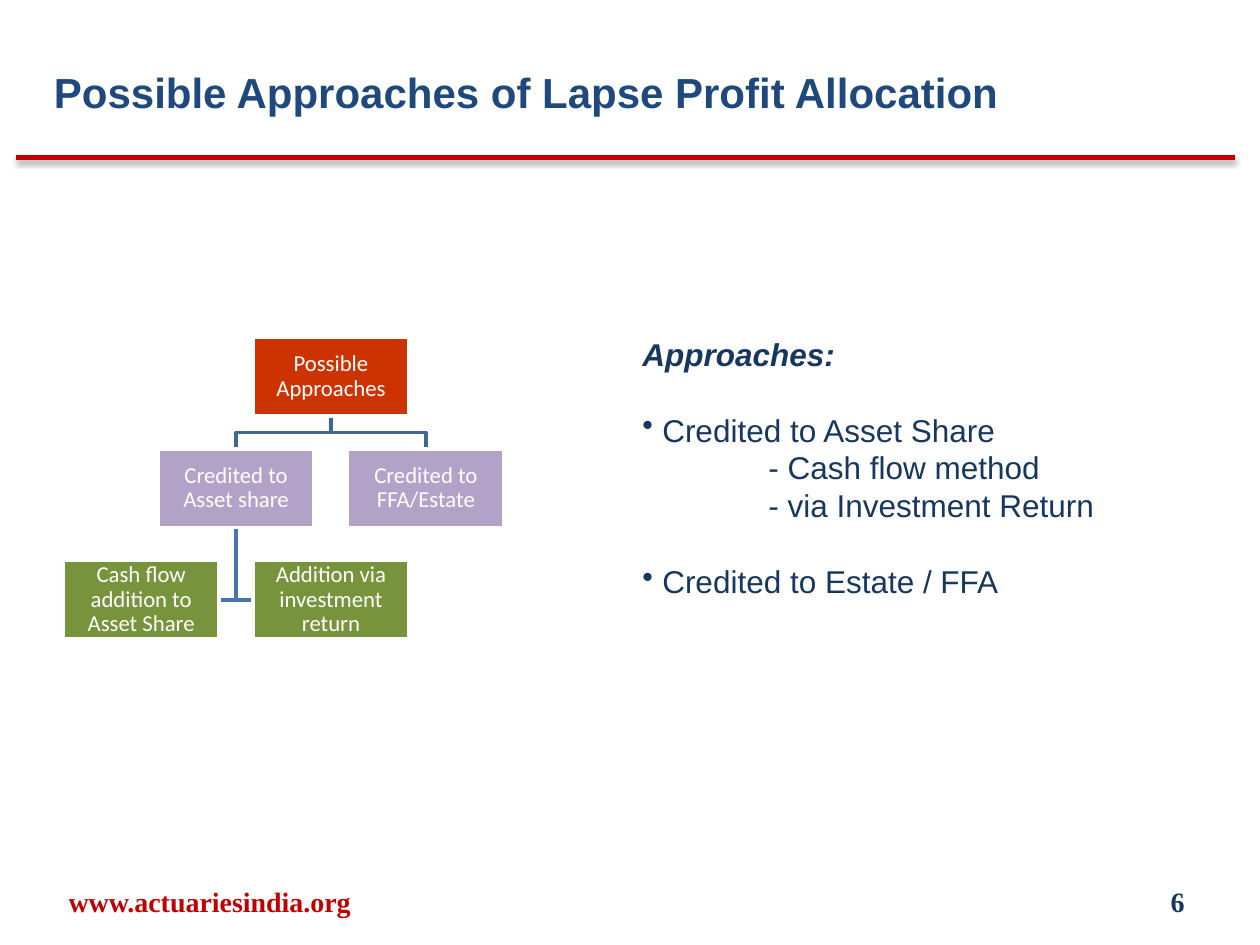
from lxml import etree
from pptx import Presentation
from pptx.dml.color import RGBColor
from pptx.enum.shapes import MSO_CONNECTOR, MSO_SHAPE
from pptx.enum.text import MSO_ANCHOR, PP_ALIGN
from pptx.oxml import parse_xml
from pptx.oxml.ns import qn
from pptx.util import Inches, Pt

STRAIGHT = MSO_CONNECTOR.STRAIGHT
RECTANGLE = MSO_SHAPE.RECTANGLE
MIDDLE = MSO_ANCHOR.MIDDLE
LEFT, CENTER, RIGHT = PP_ALIGN.LEFT, PP_ALIGN.CENTER, PP_ALIGN.RIGHT

WHITE = RGBColor(0xFF, 0xFF, 0xFF)
RED = RGBColor(0xC0, 0x00, 0x00)
BLUE = RGBColor(0x1F, 0x49, 0x7D)
NAVY = RGBColor(0x17, 0x37, 0x5E)
ORANGE = RGBColor(0xCC, 0x33, 0x00)
LILAC = RGBColor(0xB3, 0xA2, 0xC7)
GREEN = RGBColor(0x77, 0x93, 0x3C)
UPPER_LINK = RGBColor(0x3F, 0x67, 0x97)
LOWER_LINK = RGBColor(0x48, 0x75, 0xAC)

RULE_SHADOW = (
    '<a:effectLst xmlns:a="http://schemas.openxmlformats.org/drawingml/2006/main">'
    '<a:outerShdw blurRad="39370" dist="20320" dir="5400000" rotWithShape="0">'
    '<a:srgbClr val="000000"><a:alpha val="38000"/></a:srgbClr>'
    '</a:outerShdw></a:effectLst>'
)


def add_run(paragraph, text, size, font, color, bold=False, italic=False):
    run = paragraph.add_run()
    run.text = text
    run.font.size = Pt(size)
    run.font.name = font
    run.font.color.rgb = color
    run.font.bold = bold
    run.font.italic = italic


def add_text_frame(slide, left, top, width, height):
    frame = slide.shapes.add_textbox(left, top, width, height).text_frame
    frame.word_wrap = True
    return frame


def add_header(slide, left, top, width, height):
    rule_y = Inches(1.25)
    rule = slide.shapes.add_connector(STRAIGHT, Inches(0.13), rule_y, Inches(9.8), rule_y)
    rule.line.color.rgb = RED
    rule.line.width = Pt(3)
    rule._element.spPr.append(parse_xml(RULE_SHADOW))

    title = add_text_frame(slide, left, top, width, height)
    title.margin_top = Inches(0.2)
    add_run(title.paragraphs[0], "Possible Approaches of Lapse Profit Allocation",
            24, "Arial", BLUE, bold=True)


def add_footer_item(slide, left, top, width, height, text, color, align):
    frame = add_text_frame(slide, left, top, width, height)
    frame.vertical_anchor = MIDDLE
    frame.paragraphs[0].alignment = align
    add_run(frame.paragraphs[0], text, 16, "Times New Roman", color, bold=True)


def add_link(slide, points, color):
    builder = slide.shapes.build_freeform(*points[0])
    builder.add_line_segments(points[1:], close=False)
    link = builder.convert_to_shape()
    link.fill.background()
    link.line.color.rgb = color
    link.line.width = Pt(2)
    link.shadow.inherit = False


def add_node(slide, left, top, width, height, text, color):
    node = slide.shapes.add_shape(RECTANGLE, left, top, width, height)
    node.fill.solid()
    node.fill.fore_color.rgb = color
    node.line.color.rgb = WHITE
    node.line.width = Pt(2)
    node.shadow.inherit = False
    frame = node.text_frame
    frame.word_wrap = True
    frame.vertical_anchor = MIDDLE
    frame.margin_left = frame.margin_right = Inches(0.01)
    frame.margin_top = frame.margin_bottom = Inches(0.01)
    paragraph = frame.paragraphs[0]
    paragraph.alignment = CENTER
    paragraph.line_spacing = 0.9
    add_run(paragraph, text, 13, "Calibri", WHITE)


def add_hierarchy(slide, left, top, width, height):
    node_width, node_height = Inches(1.24), Inches(0.62)
    column_step = (width - node_width) // 3
    row_step = (height - node_height) // 2

    def column_x(column):
        return left + column * column_step

    def row_y(row):
        return top + row * row_step

    def center_x(column):
        return column_x(column) + node_width // 2

    root_bottom = row_y(0) + node_height
    branch_y = (root_bottom + row_y(1)) // 2
    for column in (3, 1):
        add_link(slide, [(center_x(2), root_bottom), (center_x(2), branch_y),
                         (center_x(column), branch_y), (center_x(column), row_y(1))],
                 UPPER_LINK)

    leaf_y = row_y(2) + node_height // 2
    for leaf_edge in (column_x(2), column_x(0) + node_width):
        add_link(slide, [(center_x(1), row_y(1) + node_height),
                         (center_x(1), leaf_y), (leaf_edge, leaf_y)], LOWER_LINK)

    nodes = [
        (2, 0, "Possible Approaches", ORANGE),
        (1, 1, "Credited to Asset share", LILAC),
        (0, 2, "Cash flow addition to Asset Share", GREEN),
        (2, 2, "Addition via investment return", GREEN),
        (3, 1, "Credited to FFA/Estate", LILAC),
    ]
    for column, row, text, color in nodes:
        add_node(slide, column_x(column), row_y(row), node_width, node_height, text, color)


def add_approaches(slide, left, top, width, height):
    frame = add_text_frame(slide, left, top, width, height)
    line_height = Pt(21.6)
    heading = frame.paragraphs[0]
    heading.line_spacing = line_height
    add_run(heading, "Approaches:", 18, "Arial", NAVY, bold=True, italic=True)

    items = [
        (" Credited to Asset Share", True),
        ("- Cash flow method", False),
        ("- via Investment Return", False),
        (" Credited to Estate / FFA", True),
    ]
    for text, bulleted in items:
        paragraph = frame.add_paragraph()
        properties = paragraph._p.get_or_add_pPr()
        if bulleted:
            etree.SubElement(properties, qn("a:buChar")).set("char", "•")
            paragraph.space_before = line_height
        else:
            properties.set("marL", str(Inches(1)))
        paragraph.line_spacing = line_height
        add_run(paragraph, text, 18, "Arial", NAVY)


def main():
    presentation = Presentation()
    presentation.slide_width = Inches(10)
    presentation.slide_height = Inches(7.5)
    slide = presentation.slides.add_slide(presentation.slide_layouts[6])

    footer_top, footer_height = Inches(6.95), Inches(0.4)
    add_header(slide, Inches(0.33), Inches(0.33), Inches(8.17), Inches(0.67))
    add_footer_item(slide, Inches(0.08), footer_top, Inches(3.17), footer_height,
                    "www.actuariesindia.org", RED, CENTER)
    add_footer_item(slide, Inches(7.17), footer_top, Inches(2.33), footer_height,
                    "6", NAVY, RIGHT)
    add_hierarchy(slide, Inches(0.5), Inches(2.68), Inches(3.5), Inches(2.39))
    add_approaches(slide, Inches(5), Inches(2.61), Inches(4.75), Inches(2.22))
    presentation.save("out.pptx")


if __name__ == "__main__":
    main()
